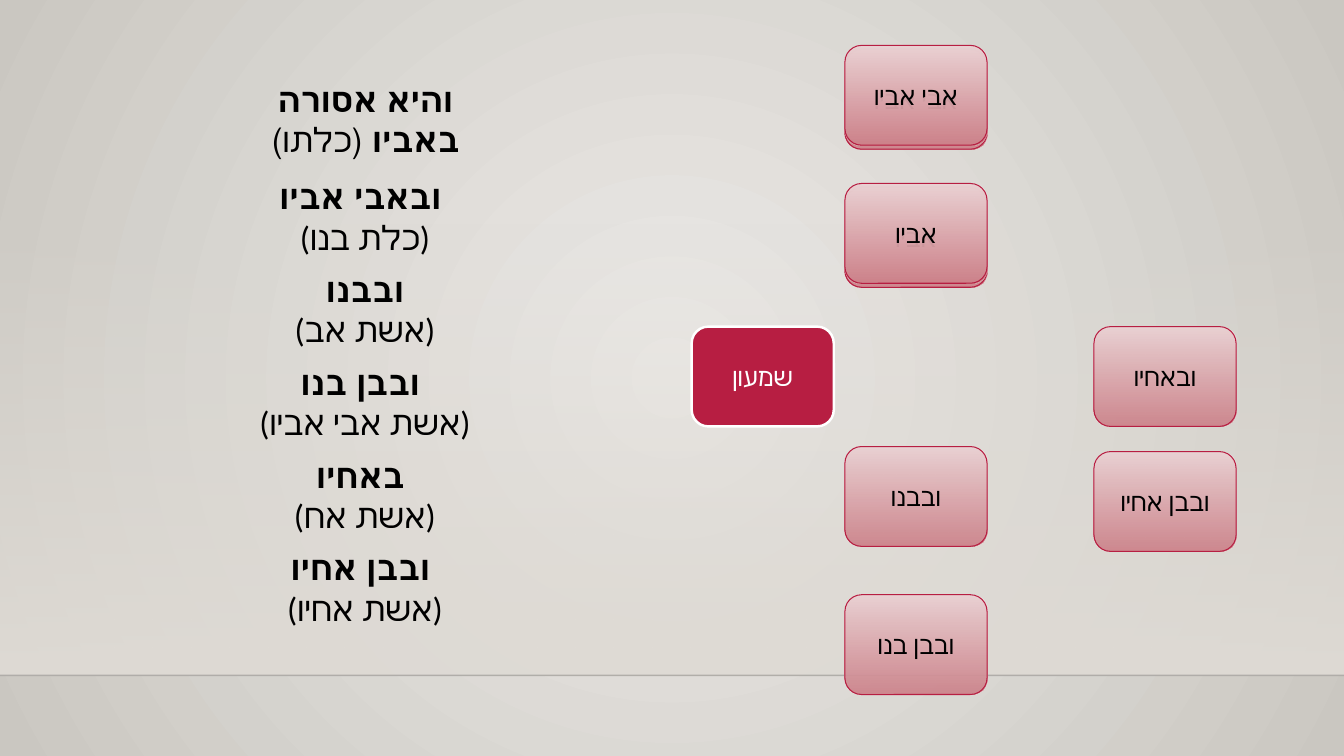
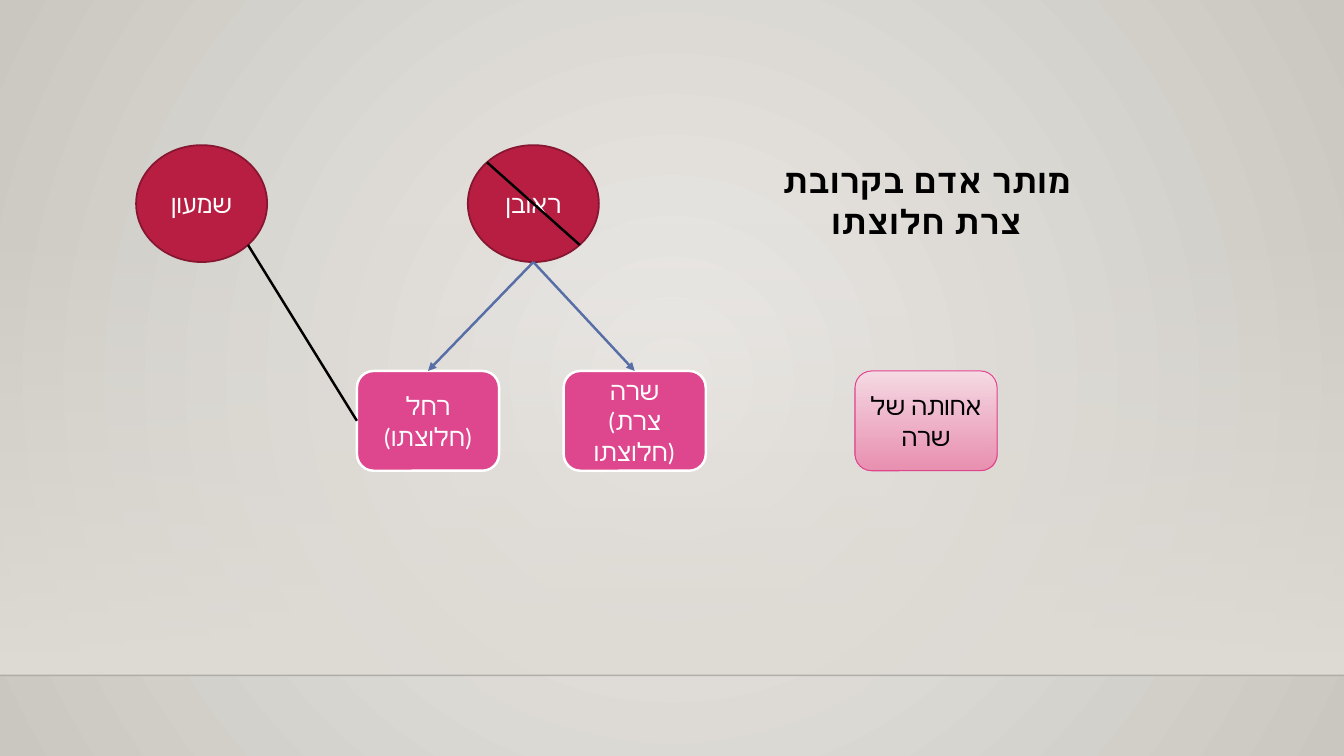
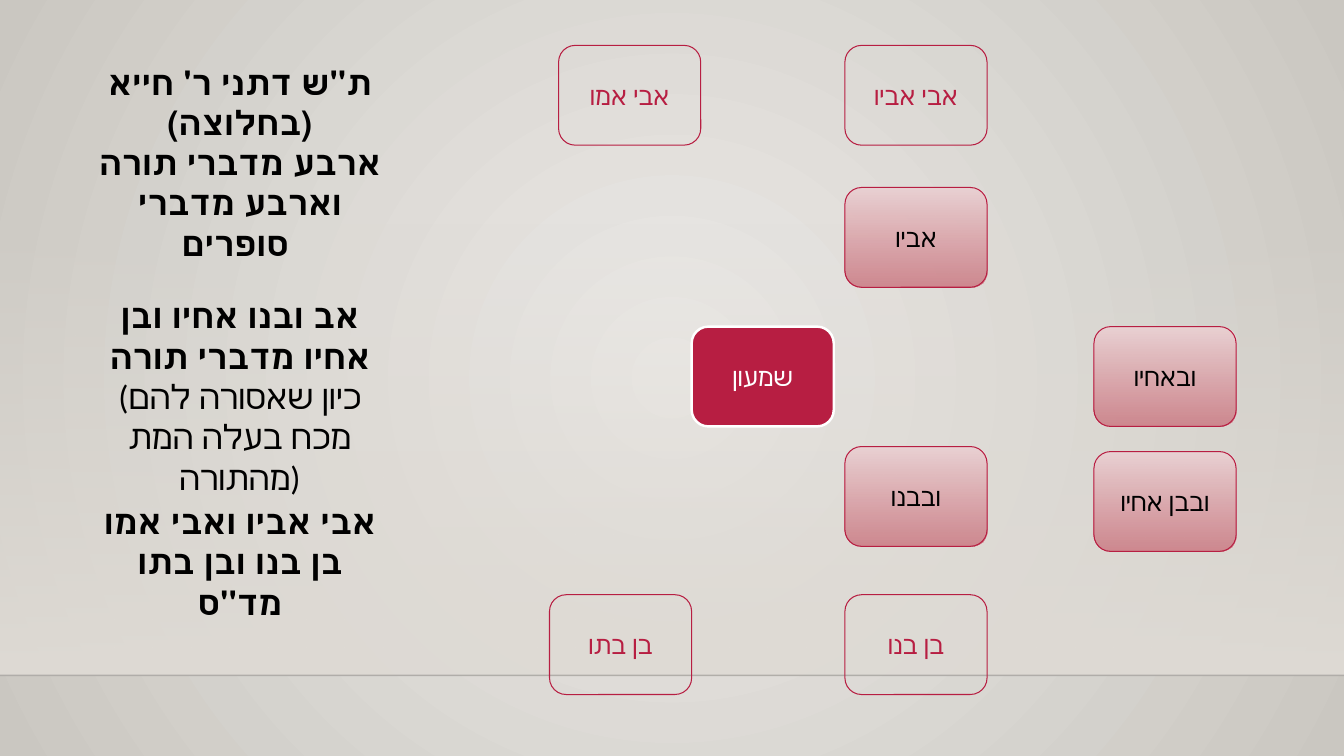
from dataclasses import dataclass
from typing import Any, NamedTuple, Optional

import pptx
import pptx.dml.color
import pptx.enum.dml
import pptx.enum.lang
import pptx.enum.shapes
import pptx.enum.text
import pptx.oxml.ns
import pptx.util
from lxml import etree

Inches = pptx.util.Inches
Pt = pptx.util.Pt
qn = pptx.oxml.ns.qn
SHAPES = pptx.enum.shapes.MSO_SHAPE

FONT = "Calibri"
SLIDE_WIDTH, SLIDE_HEIGHT = 13.33, 7.5
FLOOR_TOP = 6.7
CARD_SIZE = (1.41, 0.99)
PERSON_SIZE = (1.3, 1.16)

COLORS = {
    "glow": "ECEAE7",
    "edge": "CAC7C1",
    "wall": "DFDBD5",
    "floor": "000001",
    "black": "000000",
    "white": "FFFFFF",
    "crimson": "B71E42",
    "maroon": "871631",
    "rose_light": "EAD1D3",
    "rose_dark": "CD828A",
    "pink": "DE478E",
    "pink_light": "F7DCE5",
    "pink_dark": "EA8AAE",
    "blue": "586EA6",
}


@dataclass(frozen=True)
class Style:
    fill: tuple[str, ...]
    line: str
    line_width: float
    text: str
    size: tuple[float, float] = CARD_SIZE
    preset: Any = SHAPES.ROUNDED_RECTANGLE


FORBIDDEN = Style(("rose_light", "rose_dark"), "crimson", 0.75, "black")
OUTLINED = Style((), "crimson", 0.75, "crimson")
SUBJECT = Style(("crimson",), "white", 1.75, "white")
WIFE = Style(("pink",), "white", 1.75, "white")
SISTER = Style(("pink_light", "pink_dark"), "pink", 0.75, "black")
BROTHER = Style(("crimson",), "maroon", 1.25, "white", PERSON_SIZE, SHAPES.OVAL)


class Relative(NamedTuple):
    text: str
    left: float
    top: float
    style: Style = FORBIDDEN


class Phrase(NamedTuple):
    text: str
    bold: bool = True


class Passage(NamedTuple):
    left: float
    top: float
    width: float
    height: float
    paragraphs: list[list[Phrase]]


class Link(NamedTuple):
    start: tuple[float, float]
    end: tuple[float, float]
    color: str = "black"
    width: float = 1.75
    arrow: bool = False


def rgb(name: str) -> Any:
    return pptx.dml.color.RGBColor.from_string(COLORS[name])


def set_alpha(color: Any, percent: int) -> None:
    etree.SubElement(color, qn("a:alpha"), val=str(percent * 1000))


def paint_gradient(fill: Any, names: tuple[str, ...]) -> None:
    fill.gradient()
    fill.gradient_angle = 270
    for stop, name in zip(fill.gradient_stops, names):
        stop.color.rgb = rgb(name)


def stop_colors(shape: Any) -> list[Any]:
    return [stop[0] for stop in shape.element.iter(qn("a:gs"))]


def format_run(run: Any, size: float, color: str, bold: bool) -> None:
    run.font.name = FONT
    run.font.size = Pt(size)
    run.font.bold = bold
    run.font.color.rgb = rgb(color)
    run.font.language_id = pptx.enum.lang.MSO_LANGUAGE_ID.HEBREW


def draw_relative(slide: Any, relative: Relative) -> None:
    style = relative.style
    box = (relative.left, relative.top, *style.size)
    card = slide.shapes.add_shape(style.preset, *map(Inches, box))
    card.shadow.inherit = False
    if len(style.fill) == 2:
        paint_gradient(card.fill, style.fill)
        set_alpha(stop_colors(card)[1], 92)
    elif style.fill:
        card.fill.solid()
        card.fill.fore_color.rgb = rgb(style.fill[0])
    else:
        card.fill.background()
    card.line.color.rgb = rgb(style.line)
    card.line.width = Pt(style.line_width)
    frame = card.text_frame
    frame.text = relative.text
    frame.word_wrap = True
    frame.vertical_anchor = pptx.enum.text.MSO_ANCHOR.MIDDLE
    for paragraph in frame.paragraphs:
        paragraph.alignment = pptx.enum.text.PP_ALIGN.CENTER
        for run in paragraph.runs:
            format_run(run, 18, style.text, False)


def draw_passage(slide: Any, passage: Passage) -> None:
    frame = slide.shapes.add_textbox(*map(Inches, passage[:4])).text_frame
    frame.word_wrap = True
    frame.auto_size = pptx.enum.text.MSO_AUTO_SIZE.SHAPE_TO_FIT_TEXT
    for index, phrases in enumerate(passage.paragraphs):
        paragraph = frame.add_paragraph() if index else frame.paragraphs[0]
        paragraph.alignment = pptx.enum.text.PP_ALIGN.CENTER
        for phrase in phrases:
            run = paragraph.add_run()
            run.text = phrase.text
            format_run(run, 24, "black", phrase.bold)


def draw_link(slide: Any, link: Link) -> Any:
    connector = slide.shapes.add_connector(
        pptx.enum.shapes.MSO_CONNECTOR.STRAIGHT, *map(Inches, link.start + link.end)
    )
    connector.line.color.rgb = rgb(link.color)
    connector.line.width = Pt(link.width)
    if link.arrow:
        etree.SubElement(connector.line._get_or_add_ln(), qn("a:tailEnd"), type="triangle")
    etree.SubElement(connector.element.spPr, qn("a:effectLst"))
    return connector


def set_backdrop(master: Any) -> None:
    paint_gradient(master.background.fill, ("glow", "edge"))
    linear = next(master.element.iter(qn("a:lin")))
    radial = etree.Element(qn("a:path"), path="circle")
    center = {side: "50000" for side in "ltrb"}
    etree.SubElement(radial, qn("a:fillToRect"), center)
    linear.getparent().replace(linear, radial)


def draw_room(slide: Any) -> None:
    wall = slide.shapes.add_shape(
        SHAPES.RECTANGLE, *map(Inches, (0, 2.21, SLIDE_WIDTH, FLOOR_TOP - 2.21))
    )
    wall.shadow.inherit = False
    wall.line.fill.background()
    paint_gradient(wall.fill, ("wall", "wall"))
    set_alpha(stop_colors(wall)[0], 0)
    floor = draw_link(slide, Link((0, FLOOR_TOP), (SLIDE_WIDTH, FLOOR_TOP), "floor", 1))
    set_alpha(next(floor.element.iter(qn("a:srgbClr"))), 20)


def add_slide(
    deck: Any,
    passages: list[Passage],
    relatives: list[Relative],
    links: Optional[list[Link]] = None,
) -> None:
    slide = deck.slides.add_slide(deck.slide_layouts[6])
    draw_room(slide)
    for passage in passages:
        draw_passage(slide, passage)
    for relative in relatives:
        draw_relative(slide, relative)
    for link in links or []:
        draw_link(slide, link)


LINEAGE, BROTHERS = 8.38, 10.85
ELDERS, FATHERS, PEERS, SONS, NEPHEWS, GRANDSONS = 0.45, 1.82, 3.24, 4.43, 4.48, 5.9
STACK_OFFSET = 0.04

SHARED_FAMILY = [
    Relative("ובבנו", LINEAGE, SONS),
    Relative("אביו", LINEAGE, FATHERS + STACK_OFFSET),
    Relative("ובאחיו", BROTHERS, PEERS),
    Relative("ובבן אחיו", BROTHERS, NEPHEWS),
    Relative("שמעון", 6.86, PEERS, SUBJECT),
]

PROHIBITIONS = [
    ("ובאבי אביו ", "(כלת בנו)"),
    ("ובבנו", "(אשת אב)"),
    ("ובבן בנו ", "(אשת אבי אביו)"),
    ("באחיו ", "(אשת אח)"),
    ("ובבן אחיו ", "(אשת אחיו)"),
]


def add_prohibitions(deck: Any) -> None:
    opening = Passage(
        2.35, 0.73, 2.55, 0.91, [[Phrase("והיא אסורה באביו "), Phrase("(כלתו)", False)]]
    )
    reasons = [
        Passage(2.42, 1.7 + 0.92 * row, 2.4, 0.91, [[Phrase(kin)], [Phrase(reason, False)]])
        for row, (kin, reason) in enumerate(PROHIBITIONS)
    ]
    family = SHARED_FAMILY + [
        Relative("אבי אביו", LINEAGE, ELDERS + STACK_OFFSET),
        Relative("ובבן בנו", LINEAGE, GRANDSONS),
        Relative("אביו", LINEAGE, FATHERS),
        Relative("אבי אביו", LINEAGE, ELDERS),
    ]
    add_slide(deck, [opening, *reasons], family)


def add_permission(deck: Any) -> None:
    rule = Passage(7.64, 1.54, 3.1, 0.91, [[Phrase("מותר אדם בקרובת צרת חלוצתו")]])
    brothers_top, wives_top = 1.44, 3.68
    reuven, rachel, sarah = 4.64, 3.54, 5.59
    family = [
        Relative("ראובן", reuven, brothers_top, BROTHER),
        Relative("שמעון", 1.35, brothers_top, BROTHER),
        Relative("רחל\n(חלוצתו)", rachel, wives_top, WIFE),
        Relative("שרה\n(צרת חלוצתו)", sarah, wives_top, WIFE),
        Relative("אחותה של שרה", 8.48, wives_top, SISTER),
    ]
    marriage = (reuven + PERSON_SIZE[0] / 2, brothers_top + PERSON_SIZE[1])
    marriages = [
        Link(marriage, (wife + CARD_SIZE[0] / 2, wives_top), "blue", arrow=True)
        for wife in (rachel, sarah)
    ]
    deceased = Link((4.83, 1.61), (5.75, 2.43))
    release = Link((2.46, 2.43), (rachel, wives_top + CARD_SIZE[1] / 2))
    add_slide(deck, [rule], family, [*marriages, deceased, release])


def add_sources(deck: Any) -> None:
    left, width = 0.83, 3.1
    teaching = [
        [Phrase("ת''ש דתני ר' חייא (בחלוצה)")],
        [Phrase("ארבע מדברי תורה וארבע מדברי סופרים ")],
    ]
    torah = [
        [Phrase("אב ובנו אחיו ובן אחיו מדברי תורה")],
        [Phrase("(כיון שאסורה להם מכח בעלה המת מהתורה)", False)],
    ]
    scribes = [[Phrase("אבי אביו ואבי אמו בן בנו ובן בתו מד''ס")]]
    passages = [
        Passage(left, 0.56, width, 1.72, teaching),
        Passage(left, 2.88, width, 1.72, torah),
        Passage(left + 0.05, 4.92, width - 0.1, 1.31, scribes),
    ]
    family = SHARED_FAMILY + [
        Relative("בן בנו", LINEAGE, GRANDSONS, OUTLINED),
        Relative("אבי אביו", LINEAGE, ELDERS, OUTLINED),
        Relative("אבי אמו", 5.54, ELDERS, OUTLINED),
        Relative("בן בתו", 5.45, GRANDSONS, OUTLINED),
    ]
    add_slide(deck, passages, family)


def main() -> None:
    deck = pptx.Presentation()
    deck.slide_width = Inches(SLIDE_WIDTH)
    deck.slide_height = Inches(SLIDE_HEIGHT)
    set_backdrop(deck.slide_master)
    add_prohibitions(deck)
    add_permission(deck)
    add_sources(deck)
    deck.save("out.pptx")


if __name__ == "__main__":
    main()
